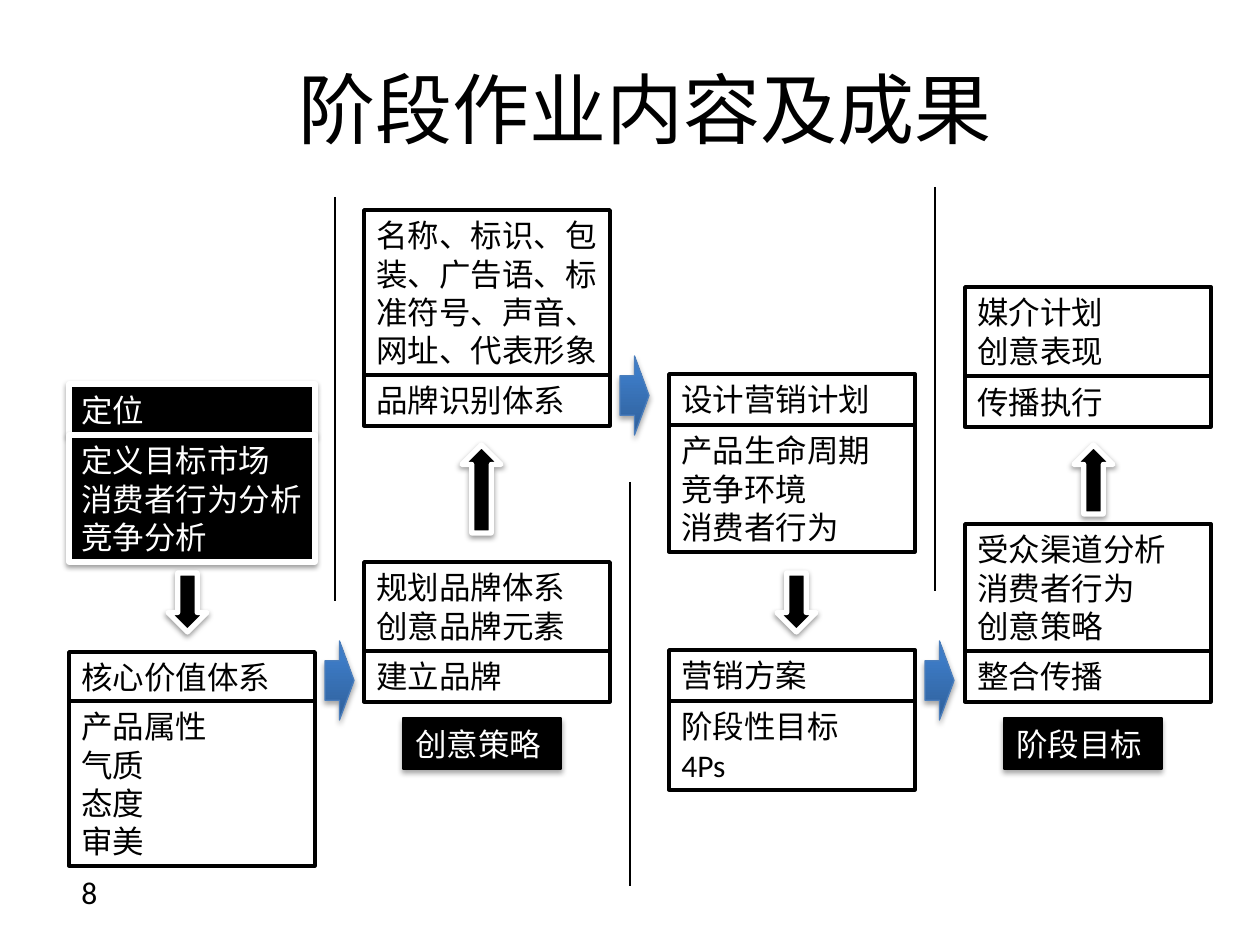
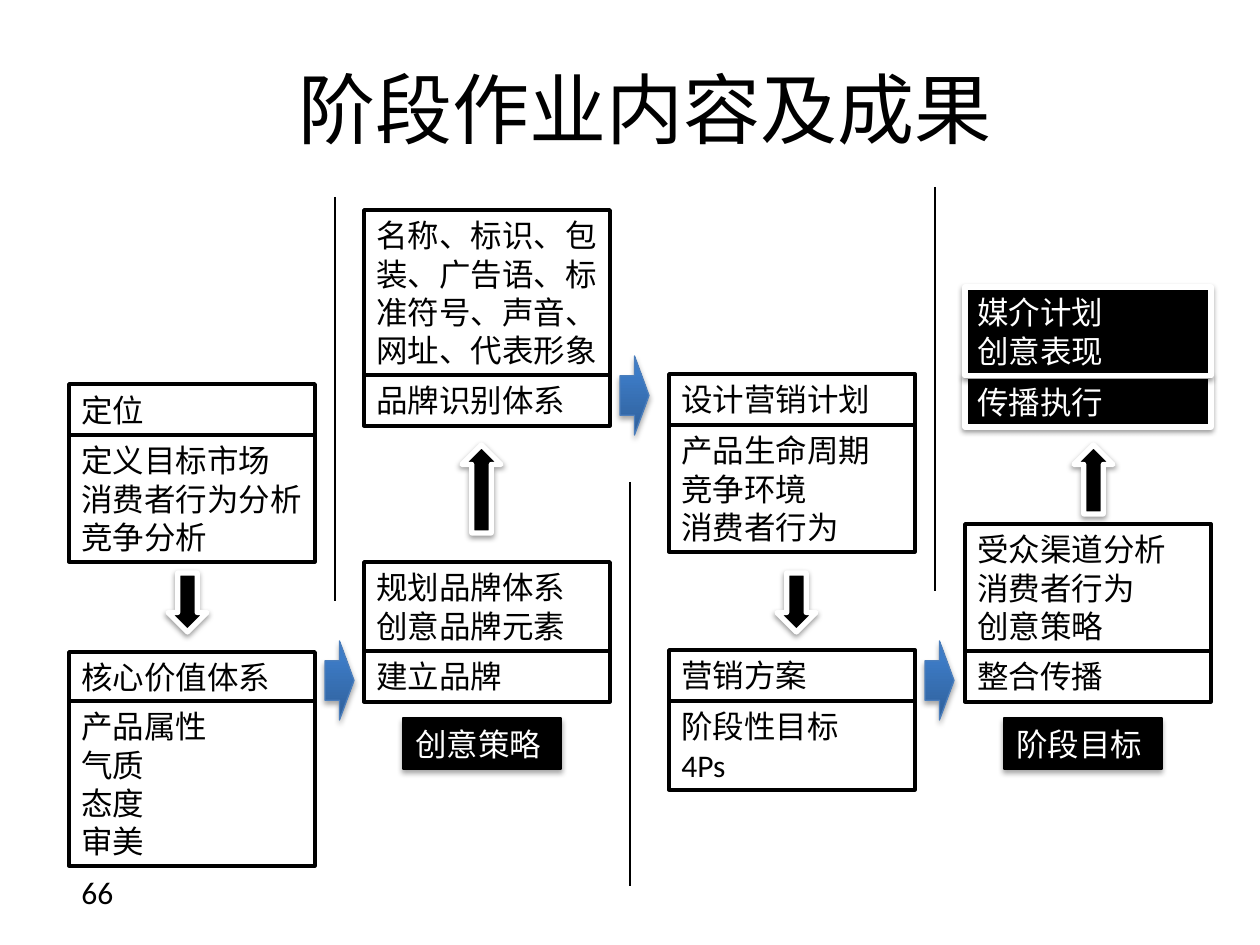
from copy import deepcopy

from lxml.etree import SubElement
from pptx import Presentation
from pptx.dml.color import RGBColor
from pptx.enum.shapes import MSO_CONNECTOR, MSO_SHAPE
from pptx.enum.text import MSO_ANCHOR, PP_ALIGN
from pptx.oxml.ns import qn
from pptx.util import Pt

PX = 914400 // 126
COLORS = {
    "black": "000000", "white": "FFFFFF", "arrow_line": "4B7EBC",
    "arrow_low": "2F5F99", "arrow_mid": "3D7CC7", "arrow_top": "3A7CCB",
}
RGB = {name: RGBColor.from_string(value) for name, value in COLORS.items()}
BODY_FONT, HEAD_FONT = "Calibri", "Noto Sans CJK SC"
BOX_W, LINE_H, PAD = 246, 38, 13

# Blocks: left, heading top, heading, details top, details
BLOCKS = [
    (69, 384, "定位", 435, ["定义目标市场", "消费者行为分析", "竞争分析"]),
    (69, 652, "核心价值体系", 701, ["产品属性", "气质", "态度", "审美"]),
    (364, 651, "建立品牌", 562, ["规划品牌体系", "创意品牌元素"]),
    (364, 375, "品牌识别体系", 210,
     ["名称、标识、包装、广告语、标准符号、声音、网址、代表形象"]),
    (669, 374, "设计营销计划", 425, ["产品生命周期", "竞争环境", "消费者行为"]),
    (669, 650, "营销方案", 701, ["阶段性目标", "4Ps"]),
    (965, 651, "整合传播", 524, ["受众渠道分析", "消费者行为", "创意策略"]),
    (965, 376, "传播执行", 287, ["媒介计划", "创意表现"]),
]
WRAPPED_LINES = {"品牌识别体系": 4}
STAGE_ARROWS = [(325, 641), (620, 356), (925, 641)]
# Step arrows: left, top, height, rotation
STEP_ARROWS = [(168, 573, 59, 0), (777, 573, 59, 0),
               (462, 445, 88, 180), (1074, 445, 69, 180)]
DIVIDERS = [(335, 197), (630, 482), (935, 187)]
DIVIDER_H = 404
LABELS = [(403, "创意策略"), (1004, "阶段目标")]
# Slides: page number, highlighted block
SLIDES = [("8", "定位"), ("66", "传播执行")]


def add_shape(s, kind, x, y, w, h, fill, line, line_w, shadow=None):
    """Add a shape; shadow is (opacity %, distance in points)."""
    sp = s.shapes.add_shape(kind, x * PX, y * PX, w * PX, h * PX)
    sp.fill.solid()
    sp.fill.fore_color.rgb = RGB[fill]
    sp.line.color.rgb = RGB[line]
    sp.line.width = Pt(line_w)
    sp.shadow.inherit = False
    if shadow:
        opacity, dist = shadow
        effects = sp._element.spPr.find(qn("a:effectLst"))
        outer = SubElement(effects, qn("a:outerShdw"), blurRad=str(Pt(3.1)),
                           dist=str(Pt(dist)), dir="5400000", rotWithShape="0")
        color = SubElement(outer, qn("a:srgbClr"), val=COLORS["black"])
        SubElement(color, qn("a:alpha"), val=str(opacity * 1000))
    return sp


def write(sp, lines, color, font=BODY_FONT):
    tf = sp.text_frame
    tf.word_wrap = True
    tf.vertical_anchor = MSO_ANCHOR.TOP
    tf.text = "\n".join(lines)
    for p in tf.paragraphs:
        p.alignment = PP_ALIGN.LEFT
        p.line_spacing = Pt(21.8)
        p.font.size = Pt(18)
        for r in p.runs:
            r.font.size = Pt(18)
            r.font.name = font
            r.font.color.rgb = RGB[color]


prs = Presentation()
prs.slide_width, prs.slide_height = 1260 * PX, 945 * PX

for page, highlight in SLIDES:
    s = prs.slides.add_slide(prs.slide_layouts[5])

    # Title
    title = s.shapes.title
    title.left, title.top, title.width, title.height = (
        78 * PX, 29 * PX, 1134 * PX, 157 * PX)
    title.text_frame.text = "阶段作业内容及成果"
    title.text_frame.vertical_anchor = MSO_ANCHOR.MIDDLE
    p = title.text_frame.paragraphs[0]
    p.alignment = PP_ALIGN.CENTER
    r = p.runs[0]
    r.font.size, r.font.name = Pt(44), BODY_FONT
    r.font.color.rgb = RGB["black"]

    # Heading and details of each block
    for x, head_y, head, details_y, details in BLOCKS:
        if head == highlight:
            style, ink = ("black", "white", 3, (38, 1.6)), "white"
        else:
            style, ink = ("white", "black", 2), "black"
        details_h = WRAPPED_LINES.get(head, len(details)) * LINE_H + PAD
        sp = add_shape(s, MSO_SHAPE.RECTANGLE, x, head_y, BOX_W,
                       LINE_H + PAD, *style)
        write(sp, [head], ink, HEAD_FONT)
        sp = add_shape(s, MSO_SHAPE.RECTANGLE, x, details_y, BOX_W,
                       details_h, *style)
        write(sp, details, ink)

    # Blue arrows between stages
    for x, y in STAGE_ARROWS:
        sp = add_shape(s, MSO_SHAPE.RIGHT_ARROW, x, y, 29, 79,
                       "arrow_mid", "arrow_line", 0.75, (35, 1.8))
        sp.fill.gradient()
        sp.fill.gradient_angle = 90
        gs_list = sp._element.spPr.find(".//" + qn("a:gsLst"))
        gs_list.append(deepcopy(gs_list[-1]))
        stops = [(0, "arrow_low"), (0.8, "arrow_mid"), (1, "arrow_top")]
        for stop, (position, color) in zip(sp.fill.gradient_stops, stops):
            stop.position = position
            stop.color.rgb = RGB[color]

    # Black arrows within a stage
    for x, y, h, rotation in STEP_ARROWS:
        sp = add_shape(s, MSO_SHAPE.DOWN_ARROW, x, y, 39, h,
                       "black", "white", 3, (38, 1.6))
        sp.rotation = rotation

    # Dividers
    for x, y in DIVIDERS:
        line = s.shapes.add_connector(MSO_CONNECTOR.STRAIGHT, x * PX, y * PX,
                                      x * PX, (y + DIVIDER_H) * PX)
        line.line.color.rgb = RGB["black"]
        line.line.width = Pt(0.75)
        SubElement(line._element.spPr, qn("a:effectLst"))

    # Page number
    box = s.shapes.add_textbox(69 * PX, 867 * PX, 294 * PX, 50 * PX)
    write(box, [page], "black")

    # Stage labels
    for x, label in LABELS:
        sp = add_shape(s, MSO_SHAPE.RECTANGLE, x, 718, 158, LINE_H + PAD,
                       "black", "black", 0.75, (35, 1.8))
        write(sp, [label], "white")

prs.save("out.pptx")
